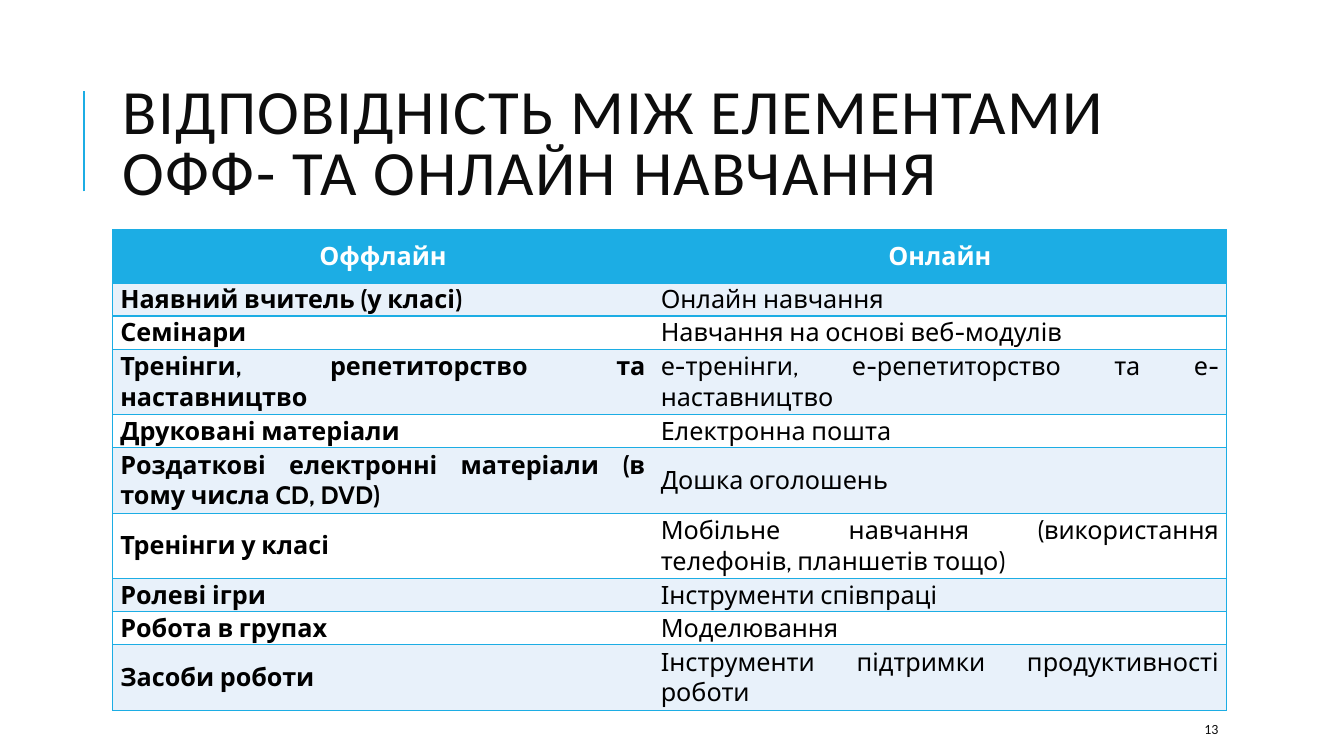
from lxml.etree import SubElement
from pptx import Presentation
from pptx.dml.color import RGBColor
from pptx.enum.shapes import MSO_CONNECTOR as CONN
from pptx.enum.text import MSO_ANCHOR as ANCHOR, PP_ALIGN as ALIGN
from pptx.oxml import parse_xml
from pptx.oxml.ns import nsdecls, qn
from pptx.util import Pt

BLUE, PALE, WHITE, BLACK, INK = "1CADE4", "E8F1FA", "FFFFFF", "000000", "0D0D0D"

HEADER = ("Оффлайн", "Онлайн")
PAIRS = [
    ("Наявний вчитель (у класі)", "Онлайн навчання"),
    ("Семінари", "Навчання на основі веб-модулів"),
    ("Тренінги, репетиторство та наставництво",
     "е-тренінги, е-репетиторство та е-наставництво"),
    ("Друковані матеріали", "Електронна пошта"),
    ("Роздаткові електронні матеріали (в тому числа CD, DVD)", "Дошка оголошень"),
    ("Тренінги у класі", "Мобільне навчання (використання телефонів, планшетів тощо)"),
    ("Ролеві ігри", "Інструменти співпраці"),
    ("Робота в групах", "Моделювання"),
    ("Засоби роботи", "Інструменти підтримки продуктивності роботи"),
]
COL_WIDTHS = (386, 409.6)
HEADER_H, LINE_H, TWO_LINE_H = 38, 23.6, 46.8
WRAP_CHARS = 38  # longer texts take two lines


def rgb(color):
    return RGBColor.from_string(color)


def write(tf, text, size=18, font="Calibri", color=INK, bold=False,
          align=ALIGN.LEFT, line=None, spacing=None):
    """Fill a text frame with one formatted paragraph."""
    tf.word_wrap = True
    p = tf.paragraphs[0]
    p.alignment = align
    if line:
        p.line_spacing = line
    r = p.add_run()
    r.text = text
    r.font.size, r.font.name, r.font.bold = Pt(size), font, bold
    r.font.color.rgb = rgb(color)
    if spacing:
        r._r.get_or_add_rPr().set("spc", str(spacing * 100))


def add_text(s, box, text, **fmt):
    tf = s.shapes.add_textbox(*map(Pt, box)).text_frame
    tf.vertical_anchor = ANCHOR.MIDDLE
    write(tf, text, **fmt)


def add_title(s, box, text):
    """Title with an accent rule to its left."""
    left, top, _, height = box
    x, mid = left - 20.8, top + height / 2 - 4.3
    rule = s.shapes.add_connector(CONN.STRAIGHT, Pt(x), Pt(mid + 36), Pt(x), Pt(mid - 36))
    rule.line.color.rgb = rgb(BLUE)
    rule.line.width = Pt(1.5)
    SubElement(rule._element.spPr, qn("a:effectLst"))
    add_text(s, box, text, size=45, line=0.8, spacing=1)


def set_borders(cell, visible):
    """Draw the named sides of a cell and clear the others."""
    tcPr = cell._tc.get_or_add_tcPr()
    for i, side in enumerate("LRTB"):
        fill = (f'<a:solidFill><a:srgbClr val="{BLUE}"/></a:solidFill>'
                if side in visible else "<a:noFill/>")
        tcPr.insert(i, parse_xml(f'<a:ln{side} {nsdecls("a")} w="12700">{fill}</a:ln{side}>'))


def add_cell(cell, text, fill, borders, **fmt):
    cell.margin_left = cell.margin_right = Pt(5.4)
    cell.margin_top = cell.margin_bottom = 0
    cell.vertical_anchor = ANCHOR.MIDDLE
    cell.fill.solid()
    cell.fill.fore_color.rgb = rgb(fill)
    set_borders(cell, borders)
    write(cell.text_frame, text, font="Cabin", **fmt)


def add_comparison(s, left, top):
    rows = [HEADER, *PAIRS]
    heights = [HEADER_H] + [TWO_LINE_H if max(map(len, pair)) > WRAP_CHARS else LINE_H
                            for pair in PAIRS]
    table = s.shapes.add_table(len(rows), len(HEADER), Pt(left), Pt(top),
                               Pt(sum(COL_WIDTHS)), Pt(sum(heights))).table
    for col, width in zip(table.columns, COL_WIDTHS):
        col.width = Pt(width)
    for i, (pair, height) in enumerate(zip(rows, heights)):
        table.rows[i].height = Pt(height)
        for j, text in enumerate(pair):
            if i == 0:
                fill, fmt = BLUE, dict(color=WHITE, bold=True, align=ALIGN.CENTER)
            else:
                fill = PALE if i % 2 else WHITE
                fmt = dict(color=BLACK, bold=j == 0, align=ALIGN.JUSTIFY)
            add_cell(table.cell(i, j), text, fill, "RTB" if j else "LTB", **fmt)


def main():
    prs = Presentation()
    prs.slide_width, prs.slide_height = Pt(960), Pt(540)
    s = prs.slides.add_slide(prs.slide_layouts[6])
    add_title(s, (80.6, 46, 765.4, 118),
              "ВІДПОВІДНІСТЬ МІЖ ЕЛЕМЕНТАМИ ОФФ- ТА ОНЛАЙН НАВЧАННЯ")
    add_comparison(s, 80.6, 164.2)
    add_text(s, (853.2, 509.8, 76.3, 21.6), "13", size=10)
    prs.save("out.pptx")


if __name__ == "__main__":
    main()
